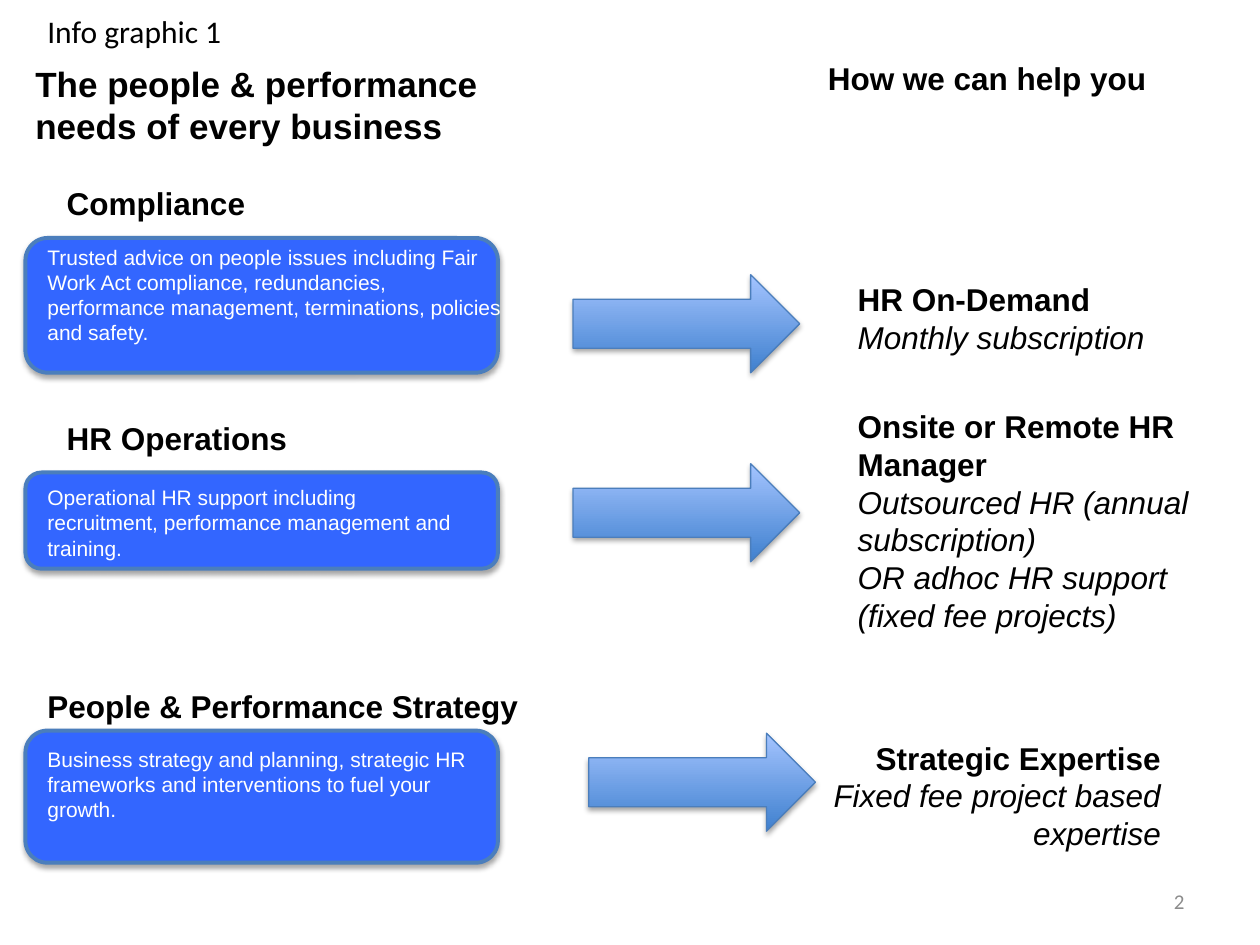
from lxml.etree import SubElement
from pptx import Presentation
from pptx.dml.color import RGBColor
from pptx.enum.shapes import MSO_SHAPE
from pptx.enum.text import MSO_ANCHOR, MSO_AUTO_SIZE, PP_ALIGN
from pptx.oxml.ns import qn
from pptx.util import Pt

COLORS = {"black": "000000", "white": "FFFFFF", "gray": "8C8C8C", "box": "3366FF",
          "edge": "4B7EBC", "dark": "3F80CE", "light": "A4C4FF"}

STYLES = {
    "title": {"name": "Arial", "size": 20, "bold": True, "color": "black"},
    "head": {"name": "Arial", "size": 18, "bold": True, "color": "black"},
    "offer": {"name": "Arial", "size": 18, "italic": True, "color": "black"},
    "body": {"name": "Arial", "size": 12, "color": "white"},
    "label": {"name": "Calibri", "size": 18, "color": "black"},
    "page": {"name": "Calibri", "size": 12, "color": "gray"},
}

# Boxes are (left, top, width, height) in points
TITLE = ("The people & performance needs of every business", (13, 15, 282, 90))

NEEDS = [
    {"name": "Compliance", "head": (31, 101.5, 118, 29), "panel": (136, 77),
     "text": "Trusted advice on people issues including Fair Work Act compliance, "
             "redundancies, performance management, terminations, policies and safety.",
     "body": (20, 136, 275, 65.5), "arrow": (327.5, 157)},
    {"name": "HR Operations", "head": (31, 236, 142.5, 29), "panel": (270, 55),
     "text": "Operational HR support including recruitment, "
             "performance management and training.",
     "body": (20, 273.5, 253, 51), "arrow": (327.5, 265)},
    {"name": "People & Performance Strategy", "head": (20, 389, 288, 29), "panel": (417.5, 75.5),
     "text": "Business strategy and planning, strategic HR frameworks "
             "and interventions to fuel your growth.",
     "body": (20, 423, 264, 51), "arrow": (336.5, 419)},
]

OFFERS = [
    (["HR On-Demand", "Monthly subscription"], (483, 156.5, 188.5, 72.5), False, False),
    (["Onsite or Remote HR Manager", "Outsourced HR (annual subscription)",
      "OR adhoc HR support (fixed fee projects)"], (483, 229, 221, 160), True, False),
    (["Strategic Expertise", "Fixed fee project based expertise"],
     (394, 418.5, 276.5, 94), True, True),
]

PANEL_X, PANEL_W = 14.5, 270
ARROW_W, ARROW_H = 129.5, 56


def rgb(key):
    return RGBColor.from_string(COLORS[key])


def place(shape, box):
    for side, size in zip(("left", "top", "width", "height"), box):
        setattr(shape, side, Pt(size))


def write(frame, lines, right=False):
    """Fill a text frame with (text, style name) lines, one paragraph each."""
    for i, (text, style) in enumerate(lines):
        para = frame.add_paragraph() if i else frame.paragraphs[0]
        para.alignment = PP_ALIGN.RIGHT if right else PP_ALIGN.LEFT
        run = para.add_run()
        run.text = text
        for key, value in STYLES[style].items():
            if key == "color":
                run.font.color.rgb = rgb(value)
            else:
                setattr(run.font, key, Pt(value) if key == "size" else value)


def add_text(slide, lines, box, wrap=True, right=False):
    frame = slide.shapes.add_textbox(*map(Pt, box)).text_frame
    frame.word_wrap = wrap
    write(frame, lines, right)
    return frame


def add_shape(slide, kind, box, weight):
    """Add an edged shape with a soft shadow below it."""
    shape = slide.shapes.add_shape(kind, *map(Pt, box))
    shape.line.color.rgb = rgb("edge")
    shape.line.width = Pt(weight)
    shape.shadow.inherit = False
    effects = shape._element.spPr.find(qn("a:effectLst"))
    cast = SubElement(effects, qn("a:outerShdw"), blurRad=str(Pt(3.1)), dist=str(Pt(1.8)),
                      dir="5400000", rotWithShape="0")
    tone = SubElement(cast, qn("a:srgbClr"), val=COLORS["black"])
    SubElement(tone, qn("a:alpha"), val="35000")
    return shape


def add_panel(slide, top, height):
    panel = add_shape(slide, MSO_SHAPE.ROUNDED_RECTANGLE, (PANEL_X, top, PANEL_W, height), 2.25)
    panel.fill.solid()
    panel.fill.fore_color.rgb = rgb("box")


def add_arrow(slide, left, top):
    arrow = add_shape(slide, MSO_SHAPE.RIGHT_ARROW, (left, top, ARROW_W, ARROW_H), 0.75)
    arrow.fill.gradient()
    arrow.fill.gradient_angle = 90
    for stop, key, spot in zip(arrow.fill.gradient_stops, ("dark", "light"), (0, 1)):
        stop.color.rgb = rgb(key)
        stop.position = spot


def main():
    deck = Presentation()
    deck.slide_width, deck.slide_height = Pt(720), Pt(540)
    slide = deck.slides.add_slide(deck.slide_layouts[5])

    text, box = TITLE
    title = slide.shapes.title
    place(title, box)
    frame = title.text_frame
    frame.auto_size = MSO_AUTO_SIZE.NONE
    frame.word_wrap = True
    frame.vertical_anchor = MSO_ANCHOR.MIDDLE
    write(frame, [(text, "title")])

    for need in NEEDS:
        add_panel(slide, *need["panel"])
        add_text(slide, [(need["text"], "body")], need["body"])
        add_text(slide, [(need["name"], "head")], need["head"], wrap=False)
        add_arrow(slide, *need["arrow"])

    add_text(slide, [("How we can help you", "head")], (466, 30, 204.5, 29), wrap=False)
    for (name, *terms), box, wrap, right in OFFERS:
        lines = [(name, "head")] + [(term, "offer") for term in terms]
        add_text(slide, lines, box, wrap, right)

    add_text(slide, [("Info graphic 1", "label")], (20, 3.5, 164, 29))
    page = add_text(slide, [("2", "page")], (516, 500.5, 168, 29), right=True)
    page.vertical_anchor = MSO_ANCHOR.MIDDLE
    deck.save("out.pptx")


if __name__ == "__main__":
    main()
